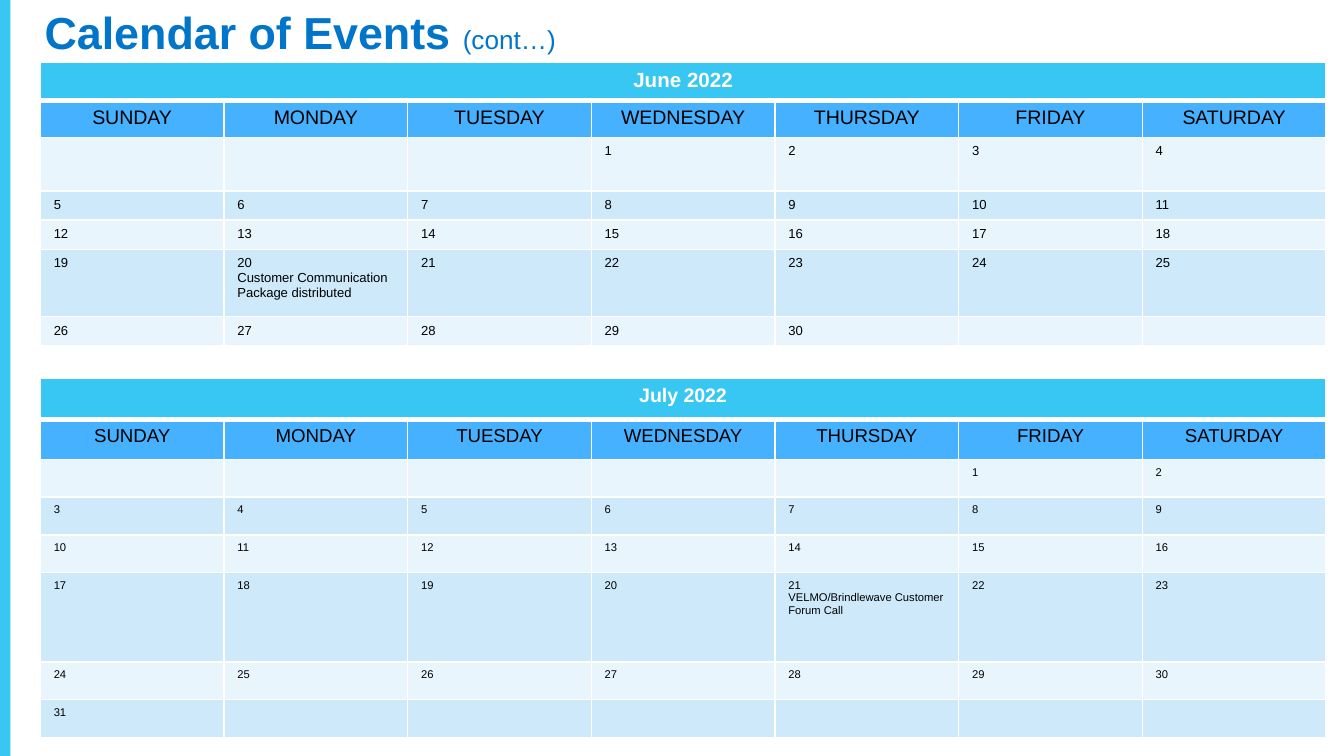
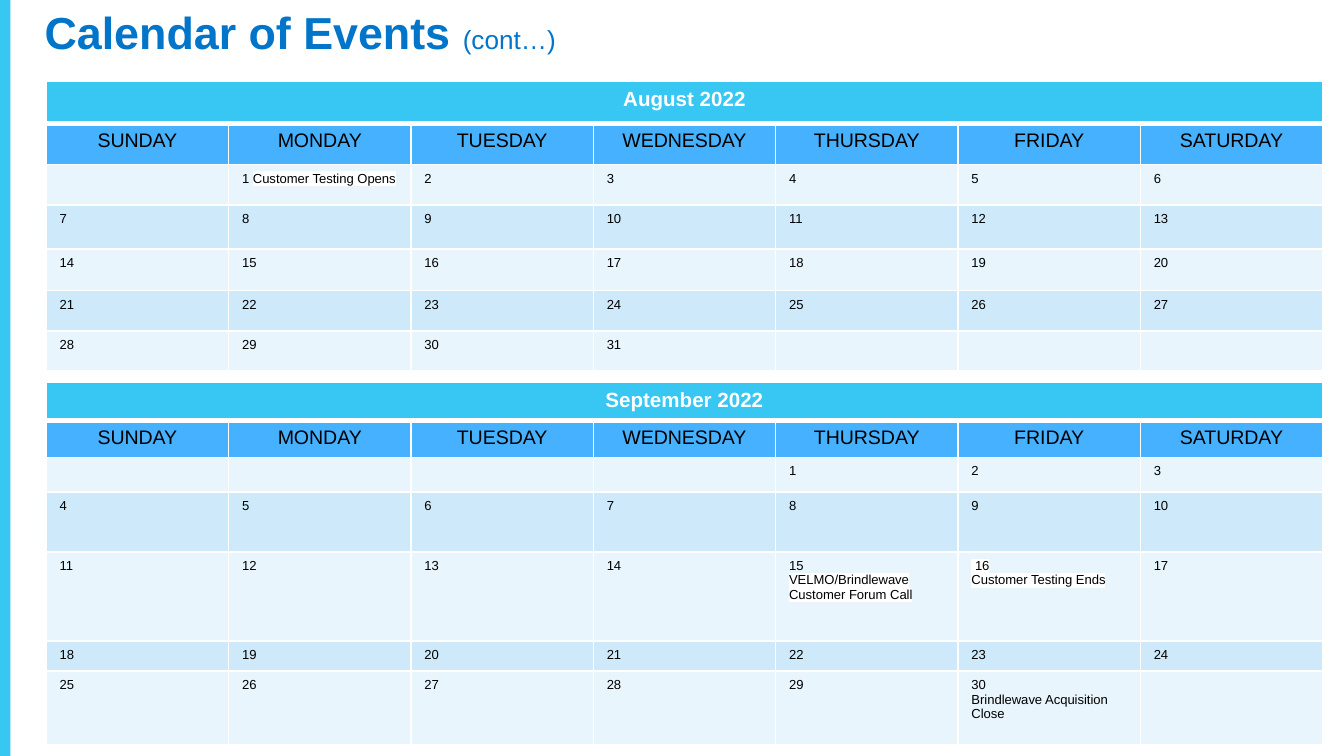
from lxml import etree
from pptx import Presentation
from pptx.dml.color import RGBColor
from pptx.enum.shapes import MSO_SHAPE
from pptx.enum.text import MSO_ANCHOR, PP_ALIGN
from pptx.oxml.ns import qn
from pptx.util import Pt

RECT = MSO_SHAPE.RECTANGLE
MIDDLE = MSO_ANCHOR.MIDDLE
CENTER = PP_ALIGN.CENTER
rgb = RGBColor.from_string

SKY, BLUE, NAVY = "38C6F3", "46B2FF", "0075C9"
BANDS = ["E8F5FD", "CEEAFA"]
WHITE, BLACK = "FFFFFF", "000000"
DAYS = ["SUNDAY", "MONDAY", "TUESDAY", "WEDNESDAY", "THURSDAY", "FRIDAY", "SATURDAY"]
FORUM = "VELMO/Brindlewave Customer Forum Call"

# Events hold paragraphs of (text, highlighted) runs. First is the weekday of day 1.
# Sizes are for the month, the weekdays and the dates.
SLIDES = [
    [
        dict(name="June 2022", first=3, last=30, left=21.6, top=33.3, col=98.4,
             sizes=(11, 10.5, 7), rows=[19.4, 19, 28.8, 15, 15, 36, 15],
             events={20: [[("20", False)],
                          [("Customer Communication Package distributed", False)]]}),
        dict(name="July 2022", first=5, last=31, left=21.6, top=202.5, col=98.4,
             sizes=(10.5, 10, 6), rows=[22, 21.6, 20.2, 20.2, 20.2, 48, 20.2, 20.2],
             events={21: [[("21", False)], [(FORUM, False)]]}),
    ],
    [
        dict(name="August 2022", first=1, last=31, left=24.8, top=43.6, col=97.7,
             sizes=(11, 10.5, 7), rows=[22.4, 22.2, 21.6, 23.5, 22.4, 21.6, 21.6],
             events={1: [[("1 ", False), ("Customer Testing Opens", True)]]}),
        dict(name="September 2022", first=4, last=30, left=24.8, top=204.8, col=97.7,
             sizes=(11, 10.5, 7), rows=[19.4, 19.2, 18.7, 31.9, 47.8, 16.2, 39.4],
             events={15: [[("15", False)], [(FORUM, True)]],
                     16: [[(" 16", True)], [("Customer Testing Ends", True)]],
                     30: [[("30", False)], [("Brindlewave Acquisition Close", False)]]}),
    ],
]


def add_run(para, text, size, color, bold=False, mark=False):
    run = para.add_run()
    run.text = text
    look = dict(name="Arial", size=Pt(size), bold=bold)
    for key, value in look.items():
        setattr(run.font, key, value)
    run.font.color.rgb = rgb(color)
    if mark:
        light = etree.Element(qn("a:highlight"))
        etree.SubElement(light, qn("a:srgbClr"), val=WHITE)
        run.font.fill._xPr.find(qn("a:solidFill")).addnext(light)


def dress(cell, fill, top=1, bottom=1):
    """Give a cell white borders, in points, and a fill."""
    props = cell._tc.get_or_add_tcPr()
    for side, width in dict(L=1, R=1, T=top, B=bottom).items():
        line = etree.SubElement(props, qn(f"a:ln{side}"), w=str(Pt(width)))
        paint = etree.SubElement(line, qn("a:solidFill"))
        etree.SubElement(paint, qn("a:srgbClr"), val=WHITE)
    cell.fill.solid()
    cell.fill.fore_color.rgb = rgb(fill)


prs = Presentation()
prs.slide_width, prs.slide_height = Pt(720), Pt(405)

for months in SLIDES:
    slide = prs.slides.add_slide(prs.slide_layouts[6])
    bar = slide.shapes.add_shape(RECT, 0, 0, Pt(5.6), Pt(405))
    bar.shadow.inherit = False
    bar.fill.solid()
    bar.fill.fore_color.rgb = rgb(SKY)
    bar.line.fill.background()

    frame = slide.shapes.add_textbox(Pt(16.8), Pt(-6), Pt(648), Pt(49)).text_frame
    frame.word_wrap = True
    frame.vertical_anchor = MIDDLE
    title = frame.paragraphs[0]
    title.line_spacing = 0.9
    add_run(title, "Calendar of Events ", 24, NAVY, bold=True)
    add_run(title, "(cont…)", 14, NAVY)

    for month in months:
        rows = month["rows"]
        big, mid, small = month["sizes"]
        grid = slide.shapes.add_table(
            len(rows), 7, Pt(month["left"]), Pt(month["top"]),
            Pt(7 * month["col"]), Pt(sum(rows))).table
        grid.first_row = grid.horz_banding = False
        for row, height in zip(grid.rows, rows):
            row.height = Pt(height)
        for col in grid.columns:
            col.width = Pt(month["col"])

        grid.cell(0, 0).merge(grid.cell(0, 6))
        head = grid.cell(0, 0).text_frame.paragraphs[0]
        head.alignment = CENTER
        add_run(head, month["name"], big, WHITE, bold=True)

        for c, name in enumerate(DAYS):
            dress(grid.cell(0, c), SKY, bottom=3)
            cell = grid.cell(1, c)
            dress(cell, BLUE, top=3)
            para = cell.text_frame.paragraphs[0]
            para.alignment = CENTER
            add_run(para, name, mid, BLACK)

            for r in range(2, len(rows)):
                cell = grid.cell(r, c)
                dress(cell, BANDS[r % 2])
                frame = cell.text_frame
                day = (r - 2) * 7 + c - month["first"] + 1
                if not 1 <= day <= month["last"]:
                    # An empty cell needs a small font to keep its row low
                    etree.SubElement(frame.paragraphs[0]._p, qn("a:endParaRPr"),
                                     sz=str(small * 100))
                    continue
                lines = month["events"].get(day, [[(str(day), False)]])
                for i, line in enumerate(lines):
                    para = frame.add_paragraph() if i else frame.paragraphs[0]
                    for text, mark in line:
                        add_run(para, text, small, BLACK, mark=mark)

prs.save("out.pptx")
